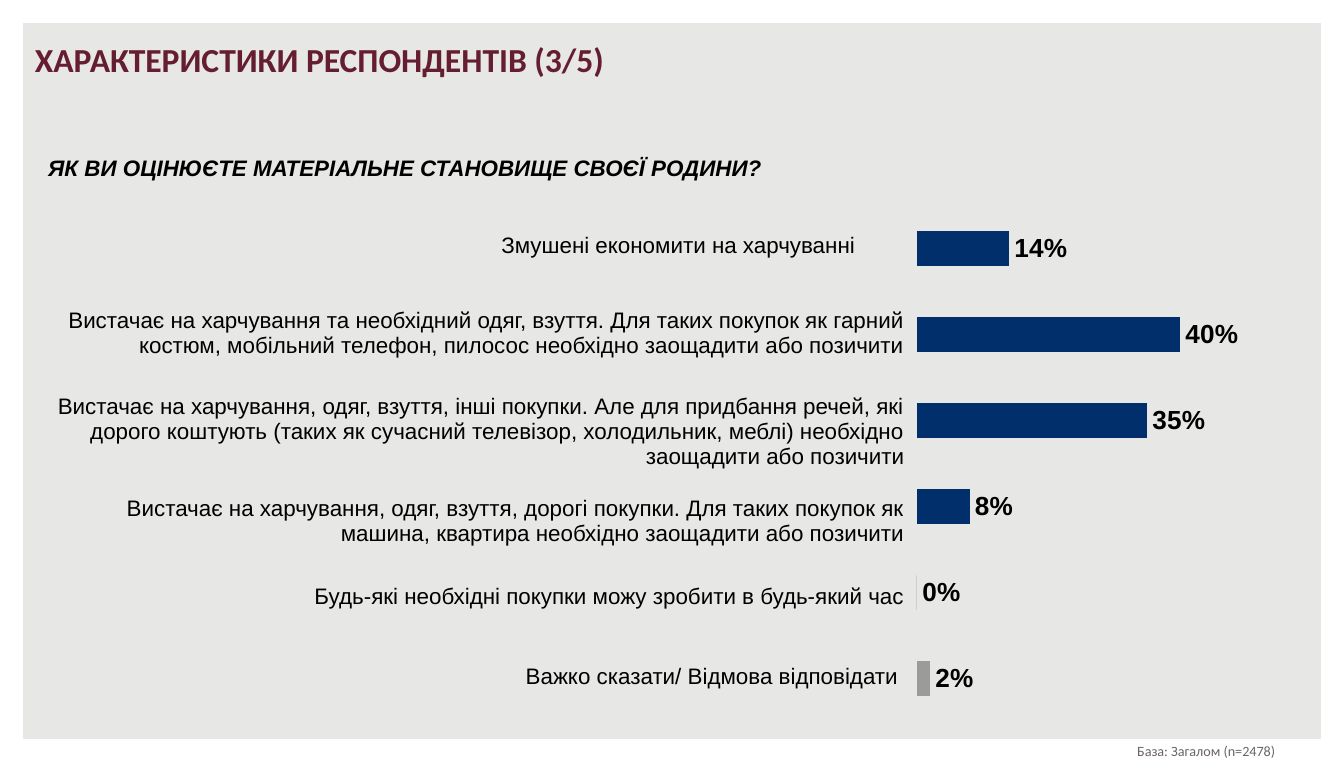
from lxml.etree import SubElement
from pptx import Presentation
from pptx.chart.data import CategoryChartData
from pptx.dml.color import RGBColor
from pptx.enum.chart import XL_CHART_TYPE, XL_LABEL_POSITION, XL_TICK_LABEL_POSITION
from pptx.enum.shapes import MSO_SHAPE
from pptx.enum.text import MSO_ANCHOR, MSO_AUTO_SIZE, PP_ALIGN
from pptx.oxml.ns import qn
from pptx.util import Pt

SLIDE_WIDTH, SLIDE_HEIGHT = 720, 408.24
PLAIN_TABLE_STYLE = "{2D5ABB26-0587-4C30-8999-92F81FD0307C}"

# answer, share of respondents, row height
ANSWERS = [
    ("Змушенi економити на харчуваннi\t", 0.14, 43.2),
    ("Вистачає на харчування та необхiдний одяг, взуття. Для таких покупок як гарний "
     "костюм, мобiльний телефон, пилосос необхiдно заощадити або позичити", 0.4, 50.4),
    ("Вистачає на харчування, одяг, взуття, iншi покупки. Але для придбання речей, якi "
     "дорого коштують (таких як сучасний телевiзор, холодильник, меблi) необхiдно "
     "заощадити або позичити", 0.35, 54.72),
    ("Вистачає на харчування, одяг, взуття, дорогi покупки. Для таких покупок як "
     "машина, квартира необхiдно заощадити або позичити", 0.08, 41.04),
    ("Будь-якi необхiднi покупки можу зробити в будь-який час", 0, 40.32),
    ("Важко сказати/ Вiдмова вiдповiдати ", 0.02, 43.92),
]


def color(hex_string):
    return RGBColor.from_string(hex_string)


def write(frame, text, size=12, font="Arial", ink="000000", bold=False, italic=False,
          align=PP_ALIGN.LEFT, anchor=MSO_ANCHOR.TOP, spacing=1.0, after=0):
    frame.word_wrap = True
    frame.vertical_anchor = anchor
    paragraph = frame.paragraphs[0]
    paragraph.alignment = align
    paragraph.line_spacing = spacing
    paragraph.space_after = Pt(after)
    run = paragraph.add_run()
    run.text = text
    run.font.size, run.font.name = Pt(size), font
    run.font.bold, run.font.italic = bold, italic
    run.font.color.rgb = color(ink)


def place_plot(chart, **layout):
    """Fix the inner plot area as fractions (x, y, w, h) of the chart."""
    plot_area = chart._chartSpace.chart.plotArea
    holder = plot_area.find(qn("c:layout"))
    if holder is None:
        holder = SubElement(plot_area, qn("c:layout"))
        plot_area.insert(0, holder)
    manual = SubElement(holder, qn("c:manualLayout"))
    settings = {"layoutTarget": "inner", "xMode": "edge", "yMode": "edge", **layout}
    for name, value in settings.items():
        SubElement(manual, qn("c:" + name)).set("val", str(value))


class SurveySlide:
    paper, border = "E7E7E5", "FFFFFF"
    accent, bar, no_answer, muted = "651D32", "002F6C", "9B9B9A", "6C6463"

    def __init__(self, presentation):
        self.slide = presentation.slides.add_slide(presentation.slide_layouts[5])
        background = self.slide.background.fill
        background.solid()
        background.fore_color.rgb = color(self.paper)

    def frame(self, thickness):
        frame = self.slide.shapes.add_shape(
            MSO_SHAPE.FRAME, 0, 0, Pt(SLIDE_WIDTH), Pt(SLIDE_HEIGHT))
        frame.adjustments[0] = thickness
        frame.shadow.inherit = False
        frame.fill.solid()
        frame.fill.fore_color.rgb = color(self.border)
        frame.line.fill.background()

    def title(self, text, left, top, width, height):
        title = self.slide.shapes.title
        title.left, title.top, title.width, title.height = map(Pt, (left, top, width, height))
        title.text_frame.auto_size = MSO_AUTO_SIZE.NONE
        write(title.text_frame, text, size=18, font="Calibri", ink=self.accent, bold=True)

    def text(self, text, left, top, width, height, **style):
        box = self.slide.shapes.add_textbox(*map(Pt, (left, top, width, height)))
        write(box.text_frame, text, **style)

    def answer_table(self, answers, left, top, width):
        total = sum(height for _, _, height in answers)
        table = self.slide.shapes.add_table(
            len(answers), 1, *map(Pt, (left, top, width, total))).table
        table.first_row = table.horz_banding = False
        table._tbl.tblPr.find(qn("a:tableStyleId")).text = PLAIN_TABLE_STYLE
        for index, (answer, _, height) in enumerate(answers):
            table.rows[index].height = Pt(height)
            cell = table.cell(index, 0)
            cell.fill.background()
            cell.margin_left = cell.margin_right = Pt(5.76)
            cell.margin_top = cell.margin_bottom = Pt(3.6)
            cell.vertical_anchor = MSO_ANCHOR.MIDDLE
            is_last = index == len(answers) - 1
            write(cell.text_frame, answer, align=PP_ALIGN.RIGHT,
                  anchor=MSO_ANCHOR.MIDDLE, spacing=1.15 if is_last else 1.0)

    def share_chart(self, answers, left, top, width, height):
        data = CategoryChartData(number_format="0%")
        data.categories = [str(number + 1) for number in range(len(answers))]
        data.add_series("Series 1", [share for _, share, _ in answers])
        chart = self.slide.shapes.add_chart(
            XL_CHART_TYPE.BAR_CLUSTERED, *map(Pt, (left, top, width, height)), data).chart
        chart.has_legend = chart.has_title = False
        chart.font.name, chart.font.size = "Calibri", Pt(18)
        chart.font.color.rgb = color("000000")
        place_plot(chart, x=0.673, y=0, w=0.327, h=1)

        categories, shares = chart.category_axis, chart.value_axis
        categories.reverse_order = True
        categories.tick_label_position = XL_TICK_LABEL_POSITION.NONE
        categories.format.line.fill.background()
        shares.minimum_scale, shares.maximum_scale = 0, 0.6
        shares.has_major_gridlines = False
        shares.visible = False

        plot = chart.plots[0]
        plot.gap_width = 150
        plot.vary_by_categories = False
        series = plot.series[0]
        last_bar = series.points[len(answers) - 1]
        for part, fill_color in ((series, self.bar), (last_bar, self.no_answer)):
            part.format.fill.solid()
            part.format.fill.fore_color.rgb = color(fill_color)

        labels = series.data_labels
        labels.show_value = True
        labels.number_format, labels.number_format_is_linked = "0%", False
        labels.position = XL_LABEL_POSITION.OUTSIDE_END
        labels.font.name, labels.font.size, labels.font.bold = "Arial", Pt(14), True
        labels.font.color.rgb = color("000000")


def main():
    presentation = Presentation()
    presentation.slide_width = Pt(SLIDE_WIDTH)
    presentation.slide_height = Pt(SLIDE_HEIGHT)

    survey = SurveySlide(presentation)
    survey.frame(thickness=0.03)
    survey.share_chart(ANSWERS, 56.16, 110.16, 646.56, 276.48)
    survey.answer_table(ANSWERS, 18.72, 110.16, 471.6)
    survey.text("ЯК ВИ ОЦIНЮЄТЕ МАТЕРIАЛЬНЕ СТАНОВИЩЕ СВОЄЇ РОДИНИ?",
                18.72, 79.2, 668.88, 21.6, bold=True, italic=True, after=8)
    survey.title("ХАРАКТЕРИСТИКИ РЕСПОНДЕНТІВ (3/5)", 11.52, 17.28, 612, 36.72)
    survey.text("База: Загалом (n=2478)", 583.2, 393.84, 126, 16.56, size=7.6,
                font="Calibri", ink=survey.muted, align=PP_ALIGN.CENTER,
                anchor=MSO_ANCHOR.MIDDLE)
    presentation.save("out.pptx")


if __name__ == "__main__":
    main()
